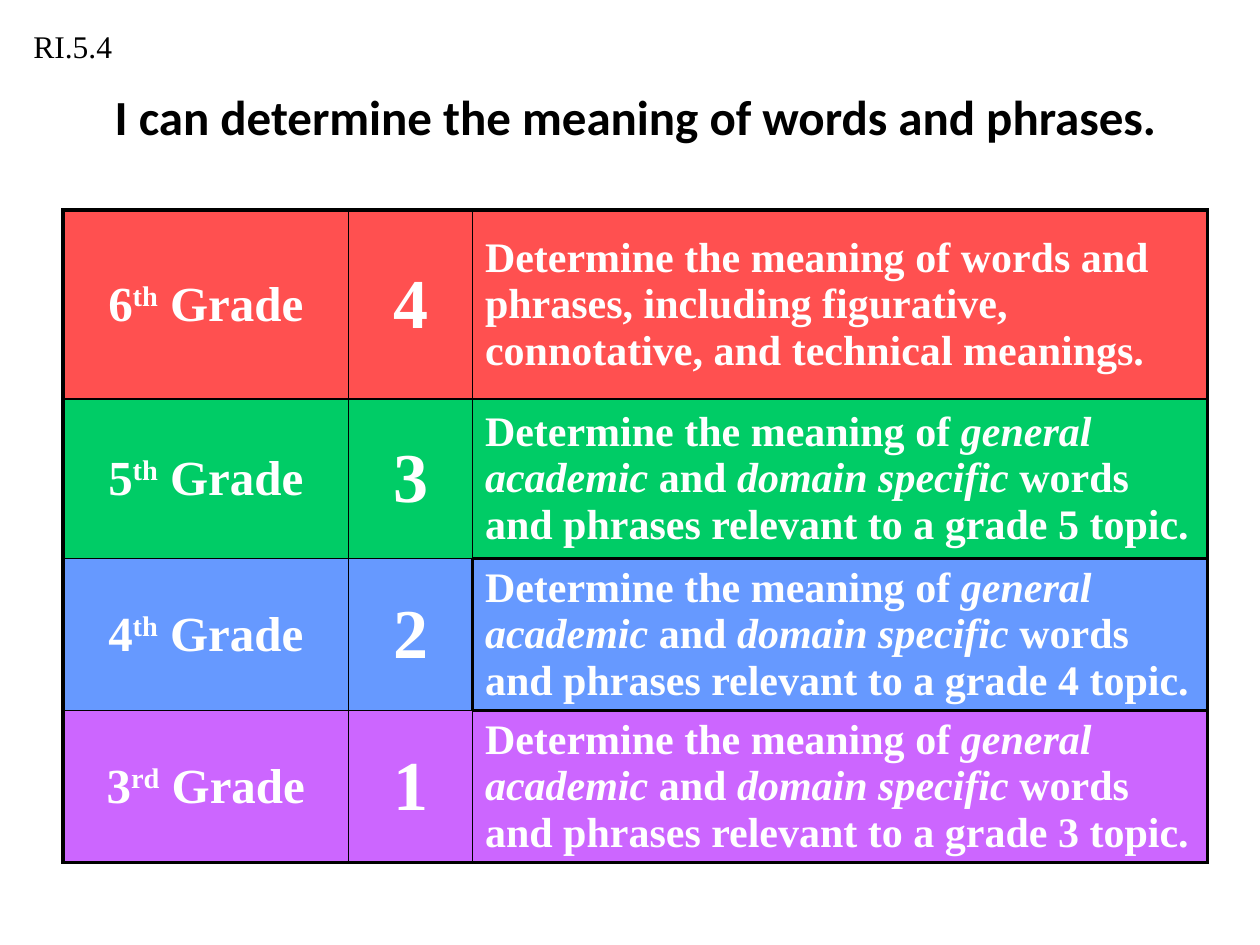
from dataclasses import dataclass

from lxml.etree import SubElement
from pptx import Presentation
from pptx.dml.color import RGBColor
from pptx.enum.text import MSO_ANCHOR, MSO_AUTO_SIZE, PP_ALIGN
from pptx.oxml.ns import qn
from pptx.util import Inches, Pt


@dataclass(frozen=True)
class Theme:
    heading_font: str = "Calibri"
    body_font: str = "Times New Roman"
    ink: str = "000000"
    light: str = "FFFFFF"
    level_fills: tuple = ("FF5050", "00CC66", "6699FF", "CC66FF")
    title_size: int = 28
    grade_size: int = 28
    score_size: int = 40
    goal_size: int = 24
    label_size: int = 18
    thin: float = 1
    medium: float = 1.5
    thick: float = 2.25


class SlideBuilder:
    """Places styled elements on a grid of 120 columns by 90 rows."""

    UNIT = Inches(10) / 120

    def __init__(self, presentation, theme):
        self.theme = theme
        self.slide = presentation.slides.add_slide(presentation.slide_layouts[5])

    def units(self, *values):
        return [round(value * self.UNIT) for value in values]

    def format_run(self, run, size, color, font, bold=False):
        run.font.size = Pt(size)
        run.font.name = font
        run.font.bold = bold
        run.font.color.rgb = RGBColor.from_string(color)

    def title(self, text, *box):
        shape = self.slide.shapes.title
        shape.left, shape.top, shape.width, shape.height = self.units(*box)
        frame = shape.text_frame
        frame.text = text
        frame.vertical_anchor = MSO_ANCHOR.MIDDLE
        paragraph = frame.paragraphs[0]
        paragraph.alignment = PP_ALIGN.CENTER
        self.format_run(paragraph.runs[0], self.theme.title_size, self.theme.ink,
                        self.theme.heading_font, bold=True)

    def label(self, text, *box):
        frame = self.slide.shapes.add_textbox(*self.units(*box)).text_frame
        frame.text = text
        frame.word_wrap = True
        frame.auto_size = MSO_AUTO_SIZE.SHAPE_TO_FIT_TEXT
        self.format_run(frame.paragraphs[0].runs[0], self.theme.label_size,
                        self.theme.ink, self.theme.body_font)

    def table(self, left, top, columns, rows):
        box = self.units(left, top, sum(columns), sum(rows))
        table = self.slide.shapes.add_table(len(rows), len(columns), *box).table
        table.first_row = table.horz_banding = False
        for column, width in zip(table.columns, self.units(*columns)):
            column.width = width
        for row, height in zip(table.rows, self.units(*rows)):
            row.height = height
        return table

    def cell(self, cell, pieces, size, fill, borders, centred=True):
        """Fill a cell; pieces are (text, style) with style "", "super" or "italic"."""
        for side, width in zip("LRTB", borders):
            line = SubElement(cell._tc.get_or_add_tcPr(), qn(f"a:ln{side}"), w=str(Pt(width)))
            SubElement(SubElement(line, qn("a:solidFill")), qn("a:srgbClr"), val=self.theme.ink)
        cell.fill.solid()
        cell.fill.fore_color.rgb = RGBColor.from_string(fill)
        cell.vertical_anchor = MSO_ANCHOR.MIDDLE
        paragraph = cell.text_frame.paragraphs[0]
        paragraph.alignment = PP_ALIGN.CENTER if centred else PP_ALIGN.LEFT
        for text, style in pieces:
            run = paragraph.add_run()
            run.text = text
            self.format_run(run, size, self.theme.light, self.theme.body_font, bold=True)
            if style == "super":
                run._r.get_or_add_rPr().set("baseline", "30000")
            elif style == "italic":
                run.font.italic = True


def goal_pieces(grade):
    if grade == 6:
        return [("Determine the meaning of words and phrases, including figurative, "
                 "connotative, and technical meanings.", "")]
    return [("Determine the meaning of ", ""), ("general academic", "italic"),
            (" and ", ""), ("domain specific ", "italic"),
            (f"words and phrases relevant to a grade {grade} topic.", "")]


def cell_borders(theme, row, column):
    """Left, right, top and bottom widths: thick frame, medium box round one goal."""
    verticals = [theme.thick, theme.thin, theme.thin, theme.thick]
    horizontals = [theme.thick, theme.medium, theme.thin, theme.thin, theme.medium]
    if row == 2:
        verticals[2] = theme.medium
    if column == 2:
        horizontals[2] = horizontals[3] = theme.medium
    return verticals[column:column + 2] + horizontals[row:row + 2]


def main():
    presentation = Presentation()
    presentation.slide_width, presentation.slide_height = Inches(10), Inches(7.5)
    theme = Theme()
    builder = SlideBuilder(presentation, theme)

    # Heading
    builder.title("I can determine the meaning of words and phrases.", 5, 5, 111, 12)

    # Proficiency scale, from the highest grade down
    table = builder.table(6, 20, columns=(27.2, 11.8, 70), rows=(18, 15.2, 13.2, 13.2))
    for row, fill in enumerate(theme.level_fills):
        grade, score = 6 - row, 4 - row
        suffix = "rd" if grade == 3 else "th"
        contents = (
            ([(str(grade), ""), (suffix, "super"), (" Grade", "")], theme.grade_size),
            ([(str(score), "")], theme.score_size),
            (goal_pieces(grade), theme.goal_size),
        )
        for column, (pieces, size) in enumerate(contents):
            builder.cell(table.cell(row, column), pieces, size, fill,
                         cell_borders(theme, row, column), centred=column < 2)

    # Standard code
    builder.label("RI.5.4", 2, 2, 17, 4.8)

    presentation.save("out.pptx")


if __name__ == "__main__":
    main()
